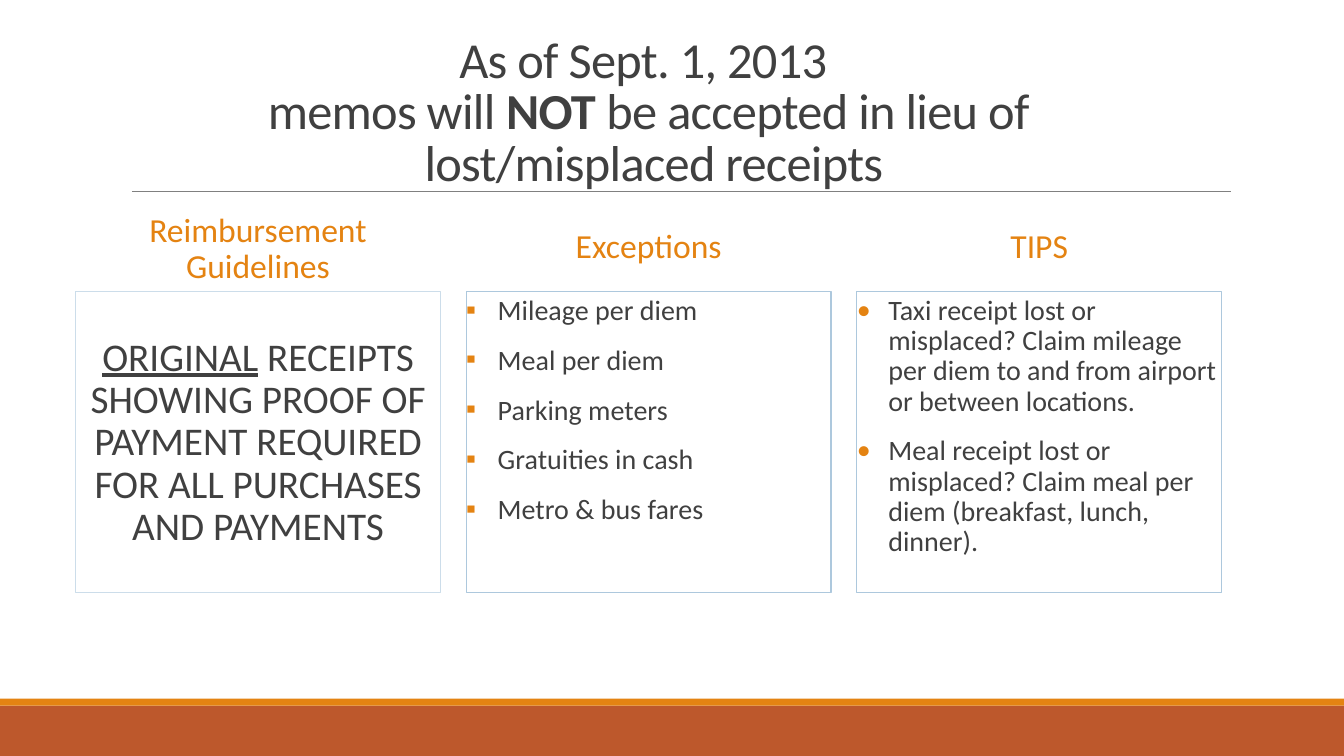
from lxml import etree
from pptx import Presentation
from pptx import util as u
from pptx.dml.color import RGBColor
from pptx.enum import shapes, text
from pptx.oxml import ns

WHITE = RGBColor(0xFF, 0xFF, 0xFF)
DARK = RGBColor(0x40, 0x40, 0x40)
GREY = RGBColor(0x80, 0x80, 0x80)
ORANGE = RGBColor(0xE4, 0x83, 0x12)
RUST = RGBColor(0xBD, 0x58, 0x2C)
PALE_BLUE = RGBColor(0xCC, 0xDD, 0xEA)
BLUE = RGBColor(0xAD, 0xC8, 0xDD)

SLIDE_WIDTH, SLIDE_HEIGHT = 960, 540
COLUMN_LEFT, COLUMN_PITCH, COLUMN_WIDTH = 54, 279, 260.6
PANEL_TOP, PANEL_HEIGHT = 208, 215.3
INDENT = 22.5


class SlideBuilder:
    font_name = "Calibri"

    def __init__(self, slide):
        self.slide = slide

    def rectangle(self, left, top, width, height, fill=None, line=None):
        shape = self.slide.shapes.add_shape(
            shapes.MSO_SHAPE.RECTANGLE, u.Pt(left), u.Pt(top), u.Pt(width), u.Pt(height))
        shape.shadow.inherit = False
        if fill is None:
            shape.fill.background()
        else:
            shape.fill.solid()
            shape.fill.fore_color.rgb = fill
        if line is None:
            shape.line.fill.background()
        else:
            shape.line.color.rgb = line
            shape.line.width = u.Pt(0.75)
        return shape

    def rule(self, left, right, top):
        connector = self.slide.shapes.add_connector(
            shapes.MSO_CONNECTOR.STRAIGHT, u.Pt(left), u.Pt(top), u.Pt(right), u.Pt(top))
        connector.line.color.rgb = GREY
        connector.line.width = u.Pt(0.5)
        etree.SubElement(connector._element.spPr, ns.qn("a:effectLst"))

    def text_box(self, left, top, width, height):
        return self.slide.shapes.add_textbox(u.Pt(left), u.Pt(top), u.Pt(width), u.Pt(height))

    def frame(self, shape, anchor, side=0, top=3.6):
        """Prepare the shape's text frame and return it."""
        frame = shape.text_frame
        frame.word_wrap = True
        frame.vertical_anchor = anchor
        frame.margin_left = frame.margin_right = u.Pt(side)
        frame.margin_top, frame.margin_bottom = u.Pt(top), u.Pt(3.6)
        return frame

    def paragraph(self, paragraph, runs, size, color, bullet=None, spacing=0.9, before=12, after=2):
        """Fill a paragraph with (text, font attributes) runs; a newline is a line break."""
        paragraph.alignment = text.PP_ALIGN.LEFT if bullet else text.PP_ALIGN.CENTER
        paragraph.line_spacing = spacing
        paragraph.space_before, paragraph.space_after = u.Pt(before), u.Pt(after)
        if bullet:
            self.bullet(paragraph, bullet)
        font = paragraph.font
        font.name, font.size, font.color.rgb = self.font_name, u.Pt(size), color
        for content, attributes in runs:
            for number, line in enumerate(content.split("\n")):
                if number:
                    paragraph.add_line_break()
                run = paragraph.add_run()
                run.text = line
                for name, value in attributes.items():
                    setattr(run.font, name, value)

    def bullet(self, paragraph, character):
        properties = paragraph._p.get_or_add_pPr()
        properties.set("marL", str(u.Pt(INDENT)))
        properties.set("indent", str(-u.Pt(INDENT)))
        color = etree.SubElement(properties, ns.qn("a:buClr"))
        etree.SubElement(color, ns.qn("a:srgbClr"), val=str(ORANGE))
        etree.SubElement(properties, ns.qn("a:buFont"), typeface=self.font_name)
        etree.SubElement(properties, ns.qn("a:buChar"), char=character)

    def title(self, runs):
        frame = self.frame(self.text_box(COLUMN_LEFT, 18, 818.6, 122.4),
                           text.MSO_ANCHOR.BOTTOM, side=7.2)
        paragraph = frame.paragraphs[0]
        self.paragraph(paragraph, runs, 36, DARK, spacing=0.85, before=0, after=0)
        for run in paragraph.runs:
            run.font._element.set("spc", "-50")

    def heading(self, left, top, height, content):
        frame = self.frame(self.text_box(left, top, COLUMN_WIDTH, height), text.MSO_ANCHOR.BOTTOM)
        self.paragraph(frame.paragraphs[0], [(content, {})], 24, ORANGE)

    def panel(self, left, items, size, line, fill=None, bullet=None, top_margin=3.6):
        shape = self.rectangle(left, PANEL_TOP, COLUMN_WIDTH, PANEL_HEIGHT, fill, line)
        frame = self.frame(shape, text.MSO_ANCHOR.TOP, top=top_margin)
        for number, runs in enumerate(items):
            paragraph = frame.add_paragraph() if number else frame.paragraphs[0]
            self.paragraph(paragraph, runs, size, DARK, bullet)


def main():
    presentation = Presentation()
    presentation.slide_width, presentation.slide_height = u.Pt(SLIDE_WIDTH), u.Pt(SLIDE_HEIGHT)
    builder = SlideBuilder(presentation.slides.add_slide(presentation.slide_layouts[6]))

    builder.rectangle(0, 504, SLIDE_WIDTH, 36, RUST)
    builder.rectangle(0, 499, SLIDE_WIDTH, 5, ORANGE)
    builder.rule(94.3, 879, 136.8)
    builder.title([
        ("As of Sept. 1, 2013 \nmemos will ", {}),
        ("NOT", {"bold": True}),
        (" be accepted in lieu of\n lost/misplaced receipts", {}),
    ])

    guidelines, exceptions, tips = (COLUMN_LEFT + COLUMN_PITCH * i for i in range(3))
    builder.heading(guidelines, 150.5, 57.5, "Reimbursement Guidelines")
    builder.heading(exceptions, 162.7, 31, "Exceptions")
    builder.heading(tips, 162.7, 31, "TIPS")

    requirement = [
        ("ORIGINAL", {"underline": True}),
        (" RECEIPTS SHOWING PROOF OF PAYMENT REQUIRED FOR ALL PURCHASES AND PAYMENTS", {}),
    ]
    builder.panel(guidelines, [requirement], 28, PALE_BLUE, top_margin=33)
    allowed = ["Mileage per diem", "Meal per diem", "Parking meters",
               "Gratuities in cash", "Metro & bus fares"]
    builder.panel(exceptions, [[(item, {})] for item in allowed], 20, BLUE, WHITE, "▪")
    advice = [
        "Taxi receipt lost or misplaced? Claim mileage per diem to and from airport "
        "or between locations.",
        "Meal receipt lost or misplaced? Claim meal per diem (breakfast, lunch, dinner).",
    ]
    builder.panel(tips, [[(item, {})] for item in advice], 20, BLUE, bullet="•")

    presentation.save("out.pptx")


if __name__ == "__main__":
    main()
